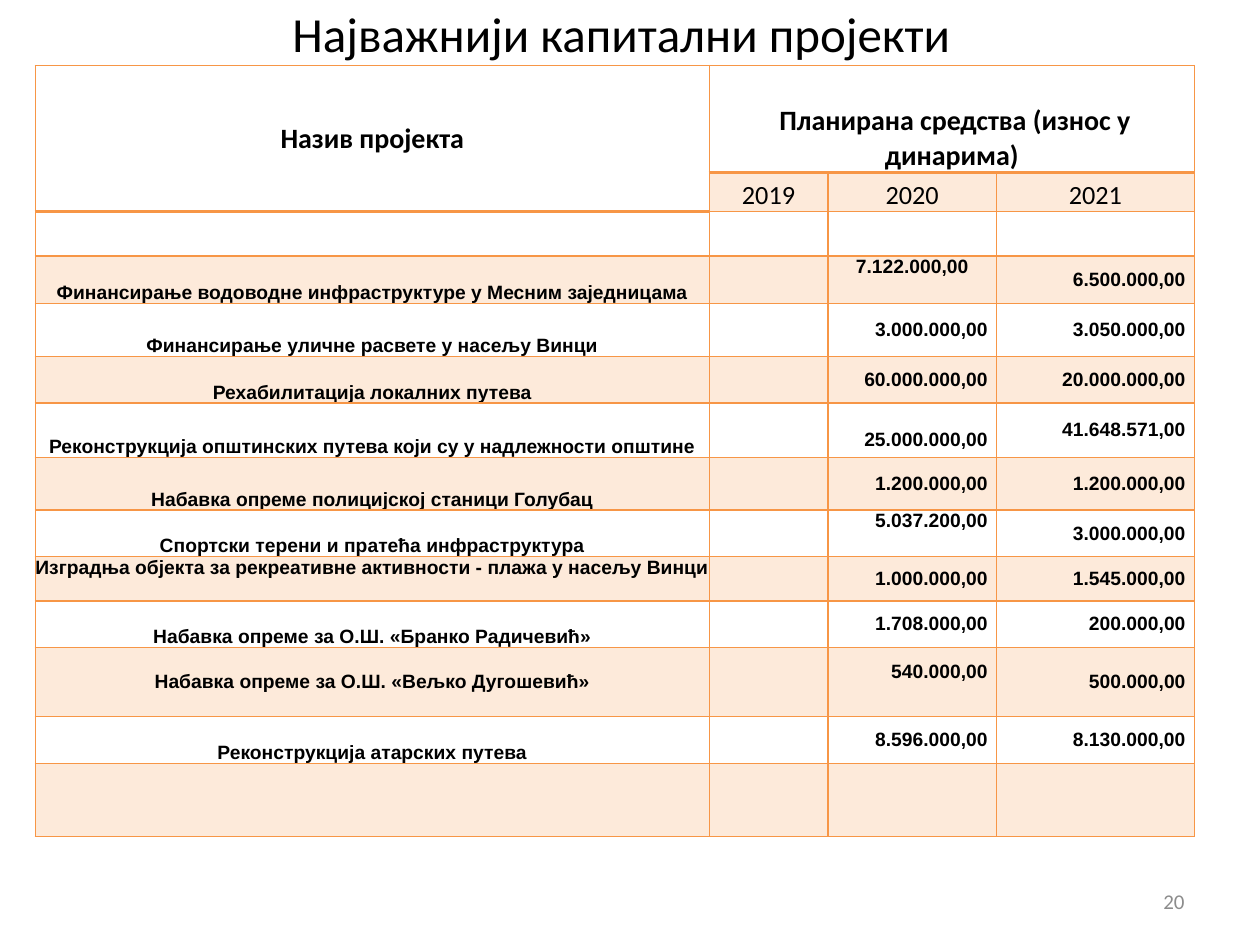
from lxml import etree
from pptx import Presentation
from pptx.dml.color import RGBColor
from pptx.enum.text import MSO_ANCHOR, PP_ALIGN
from pptx.oxml.ns import qn
from pptx.util import Inches, Pt

TOP, MIDDLE, BOTTOM = MSO_ANCHOR.TOP, MSO_ANCHOR.MIDDLE, MSO_ANCHOR.BOTTOM
CENTER, RIGHT = PP_ALIGN.CENTER, PP_ALIGN.RIGHT

COLORS = {"text": "000000", "accent": "F79646", "number": "8C8C8C"}
BAND_OPACITY = 20
SIDE_MARGIN = 0.07

COLUMN_WIDTHS = [5.35, 0.94, 1.34, 1.57]
ROW_HEIGHTS = [0.85, 0.31, 0.35, 0.38, 0.42, 0.37, 0.43,
               0.42, 0.37, 0.35, 0.37, 0.55, 0.37, 0.58]
YEARS = ["2019", "2020", "2021"]
FIRST_PROJECT_ROW = 3

# Project, planned for 2020, planned for 2021
PROJECTS = [
    ("Финансирање водоводне инфраструктуре у Месним заједницама", "7.122.000,00", "6.500.000,00"),
    ("Финансирање уличне расвете у насељу Винци", "3.000.000,00", "3.050.000,00"),
    ("Рехабилитација локалних путева", "60.000.000,00", "20.000.000,00"),
    ("Реконструкција општинских путева који су у надлежности општине", "25.000.000,00", "41.648.571,00"),
    ("Набавка опреме полицијској станици Голубац", "1.200.000,00", "1.200.000,00"),
    ("Спортски терени и пратећа инфраструктура", "5.037.200,00", "3.000.000,00"),
    ("Изградња објекта за рекреативне активности - плажа у насељу Винци", "1.000.000,00", "1.545.000,00"),
    ("Набавка опреме за О.Ш. «Бранко Радичевић»", "1.708.000,00", "200.000,00"),
    ("Набавка опреме за О.Ш. «Вељко Дугошевић»", "540.000,00", "500.000,00"),
    ("Реконструкција атарских путева", "8.596.000,00", "8.130.000,00"),
]

# Cells (row, column) that depart from their column's usual placement
ANCHORS = {(3, 2): TOP, (8, 2): TOP, (9, 0): TOP, (11, 0): MIDDLE}
ALIGNMENTS = {(3, 2): CENTER}
TOP_MARGINS = {(6, 2): 0.16}
BOTTOM_MARGINS = {(11, 2): 0.17}


def write_text(frame, text, size, font="Calibri", bold=False, align=CENTER, color="text"):
    paragraph = frame.paragraphs[0]
    paragraph.alignment = align
    run = paragraph.add_run()
    run.text = text
    run.font.name = font
    run.font.size = Pt(size)
    run.font.bold = bold
    run.font.color.rgb = RGBColor.from_string(COLORS[color])


def set_margins(target, left=0, top=0, right=0, bottom=0):
    target.margin_left, target.margin_right = Inches(left), Inches(right)
    target.margin_top, target.margin_bottom = Inches(top), Inches(bottom)


def fill_cell(cell, shaded):
    if not shaded:
        cell.fill.background()
        return
    cell.fill.solid()
    cell.fill.fore_color.rgb = RGBColor.from_string(COLORS["accent"])
    color = cell._tc.tcPr.find(".//" + qn("a:srgbClr"))
    etree.SubElement(color, qn("a:alpha"), val=str(BAND_OPACITY * 1000))


def border_cell(cell, bottom_width):
    properties = cell._tc.get_or_add_tcPr()
    widths = {"lnL": 1, "lnR": 1, "lnT": 1, "lnB": bottom_width}
    for position, (side, width) in enumerate(widths.items()):
        line = etree.Element(qn("a:" + side), w=str(Pt(width)))
        solid = etree.SubElement(line, qn("a:solidFill"))
        etree.SubElement(solid, qn("a:srgbClr"), val=COLORS["accent"])
        properties.insert(position, line)


def add_project_table(slide):
    rows, columns = len(ROW_HEIGHTS), len(COLUMN_WIDTHS)
    table = slide.shapes.add_table(rows, columns, Inches(0.28), Inches(0.52),
                                   Inches(9.21), Inches(6.14)).table
    table.first_row = table.horz_banding = False
    for column, width in zip(table.columns, COLUMN_WIDTHS):
        column.width = Inches(width)
    for row, height in zip(table.rows, ROW_HEIGHTS):
        row.height = Inches(height)

    # Fills and borders
    for row in range(rows):
        for column in range(columns):
            cell = table.cell(row, column)
            is_heading = row == 0 or (row, column) == (1, 0)
            fill_cell(cell, row % 2 == 1 and not is_heading)
            border_cell(cell, 2 if is_heading else 1)
            set_margins(cell, left=SIDE_MARGIN, right=SIDE_MARGIN)

    # Headings
    table.cell(0, 0).merge(table.cell(1, 0))
    table.cell(0, 1).merge(table.cell(0, 3))
    headings = [(0, "Назив пројекта", MIDDLE),
                (1, " Планирана средства (износ у динарима)", BOTTOM)]
    for column, text, anchor in headings:
        cell = table.cell(0, column)
        cell.vertical_anchor = anchor
        write_text(cell.text_frame, text, 16, bold=True)
    for column, year in enumerate(YEARS, start=1):
        cell = table.cell(1, column)
        cell.vertical_anchor = BOTTOM
        write_text(cell.text_frame, year, 15)

    # Projects; nothing is entered for 2019
    for row, (name, *amounts) in enumerate(PROJECTS, start=FIRST_PROJECT_ROW):
        for column, text in zip((0, 2, 3), (name, *amounts)):
            cell, place = table.cell(row, column), (row, column)
            is_name = column == 0
            side = 0 if is_name else SIDE_MARGIN
            set_margins(cell, side, TOP_MARGINS.get(place, 0),
                        side, BOTTOM_MARGINS.get(place, 0))
            cell.vertical_anchor = ANCHORS.get(place, BOTTOM if is_name else MIDDLE)
            align = ALIGNMENTS.get(place, CENTER if is_name else RIGHT)
            write_text(cell.text_frame, text, 11, "Arial", True, align)


def add_slide_number(slide, number):
    box = slide.shapes.add_textbox(Inches(7.17), Inches(6.95), Inches(2.33), Inches(0.4))
    box.text_frame.word_wrap = True
    box.text_frame.vertical_anchor = MIDDLE
    write_text(box.text_frame, number, 12, align=RIGHT, color="number")


def set_title(slide, text):
    title = slide.shapes.title
    title.left, title.top = Inches(0.43), Inches(0)
    title.width, title.height = Inches(9), Inches(0.52)
    title.text_frame.vertical_anchor = MIDDLE
    write_text(title.text_frame, text, 28)


def main():
    presentation = Presentation()
    presentation.slide_width, presentation.slide_height = Inches(10), Inches(7.5)
    slide = presentation.slides.add_slide(presentation.slide_layouts[5])
    add_project_table(slide)
    add_slide_number(slide, "20")
    set_title(slide, "Најважнији капитални пројекти")
    presentation.save("out.pptx")


if __name__ == "__main__":
    main()
